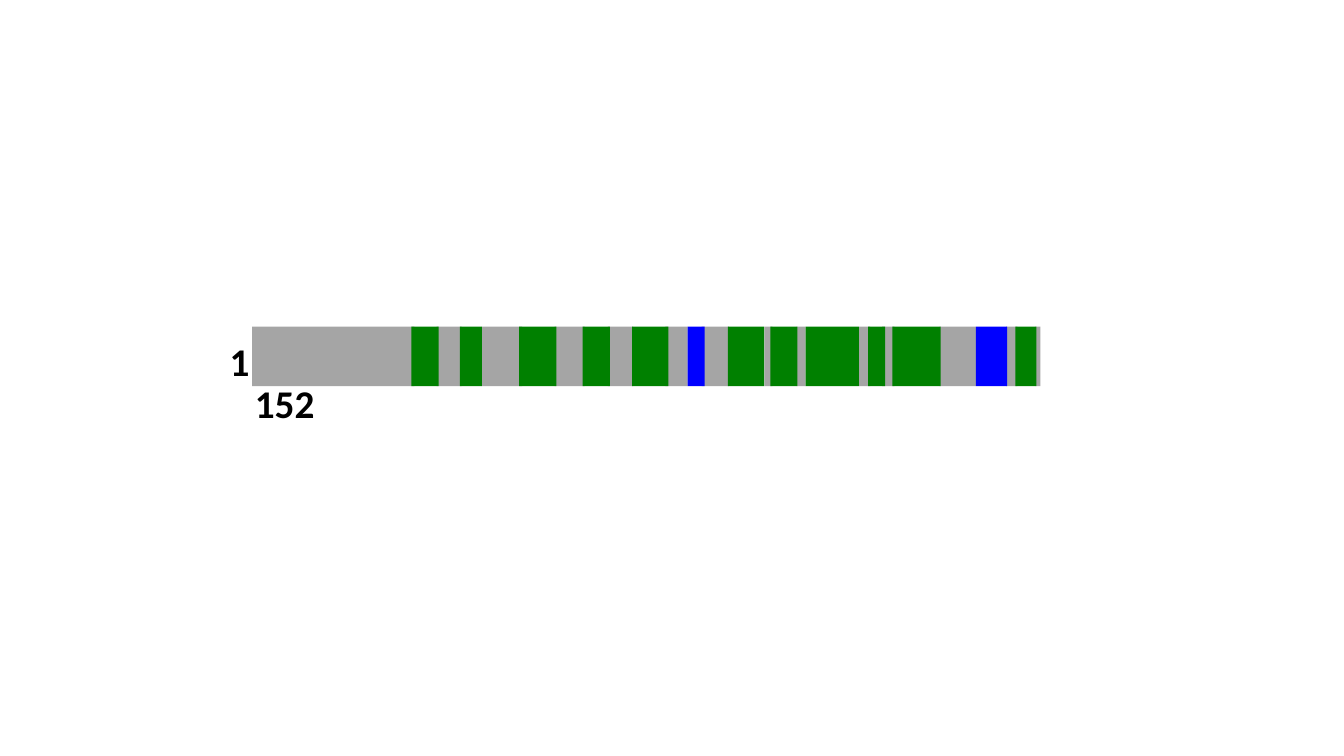
"""Sequence bar of 152 residues with green and blue segments on a grey track."""
from pptx import Presentation, util as u
from pptx.dml.color import RGBColor
from pptx.enum import shapes

THEME = {"grey": "A5A5A5", "blue": "0000FF", "green": "008000",
         "text": "000000", "font": "Calibri", "size": 28}
SEGMENTS = {
    "grey": [(250, 161), (433, 25), (478, 40), (550, 30), (603, 25), (660, 22), (696, 27),
             (758, 8), (790, 9), (852, 11), (875, 12), (932, 36), (998, 11), (1027, 5)],
    "blue": [(682, 17), (968, 31)],
    "green": [(408, 27), (456, 22), (515, 37), (578, 27), (627, 36), (722, 36),
              (764, 27), (799, 53), (861, 17), (885, 48), (1007, 21)],
}
COLS, ROWS = 1333, 750
BAR_TOP, BAR_HEIGHT = 324, 59

prs = Presentation()
prs.slide_width, prs.slide_height = u.Inches(13.33), u.Inches(7.5)
col, row = prs.slide_width // COLS, prs.slide_height // ROWS
s = prs.slides.add_slide(prs.slide_layouts[6])

tf = s.shapes.add_textbox(218 * col, 335 * row, 900 * col, 100 * row).text_frame
tf.word_wrap = True
for i, label in enumerate(["1", "152"]):
    p = tf.add_paragraph() if i else tf.paragraphs[0]
    p.text = label
    p.line_spacing = 0.9
    p._p.get_or_add_pPr().set("marL", str(i * 25 * col))
    p.font.name, p.font.size, p.font.bold = THEME["font"], u.Pt(THEME["size"]), True
    p.font.color.rgb = RGBColor.from_string(THEME["text"])

for colour, spans in SEGMENTS.items():
    for start, width in spans:
        sp = s.shapes.add_shape(shapes.MSO_SHAPE.RECTANGLE, start * col, BAR_TOP * row,
                                width * col, BAR_HEIGHT * row)
        sp.shadow.inherit = False
        sp.fill.solid()
        sp.fill.fore_color.rgb = RGBColor.from_string(THEME[colour])
        sp.line.fill.background()

prs.save("out.pptx")
